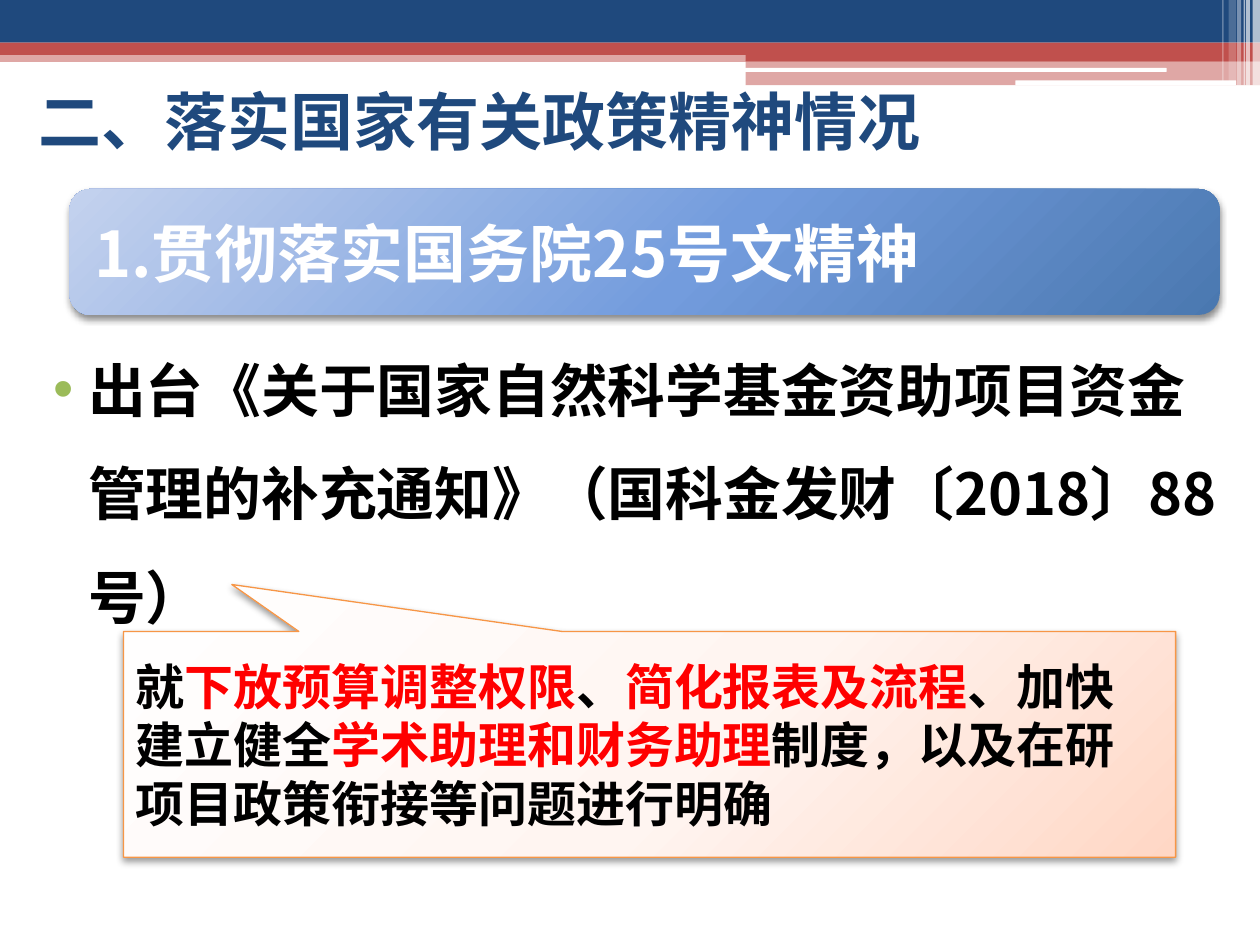
from dataclasses import dataclass

from lxml.etree import SubElement
from pptx import Presentation
from pptx.dml.color import RGBColor
from pptx.enum.shapes import MSO_SHAPE as Preset
from pptx.enum.text import MSO_ANCHOR as Anchor
from pptx.oxml.ns import qn
from pptx.util import Cm, Pt

FONT = "Noto Sans CJK SC"
NAVY, BRICK, WHITE, BLACK, RED = "1F497D", "C0504D", "FFFFFF", "000000", "FF0000"
ORANGE, GREEN = "F79646", "9BBB59"


@dataclass(frozen=True)
class Box:
    left: float
    top: float
    width: float
    height: float

    def lengths(self) -> tuple:
        return Cm(self.left), Cm(self.top), Cm(self.width), Cm(self.height)


@dataclass(frozen=True)
class Band:
    box: Box
    color: str
    opacity: int = 100
    preset: Preset = Preset.RECTANGLE


@dataclass(frozen=True)
class Panel:
    box: Box
    preset: Preset
    stops: tuple
    shadow_opacity: int
    adjustments: tuple = ()
    outline: str = ""


def rgb(color: str) -> RGBColor:
    return RGBColor.from_string(color)


def add_child(parent, tag: str, **attributes):
    return SubElement(parent, qn(tag), {key: str(value) for key, value in attributes.items()})


def add_color(parent, color: str, opacity: int = 100):
    swatch = add_child(parent, "a:srgbClr", val=color)
    if opacity < 100:
        add_child(swatch, "a:alpha", val=opacity * 1000)


def draw_band(slide, band: Band):
    strip = slide.shapes.add_shape(band.preset, *band.box.lengths())
    strip.shadow.inherit = False
    strip.line.fill.background()
    strip.fill.solid()
    strip.fill.fore_color.rgb = rgb(band.color)
    if band.opacity < 100:
        swatch = strip.fill._xPr.find(qn("a:solidFill"))[0]
        add_child(swatch, "a:alpha", val=band.opacity * 1000)


def draw_panel(slide, panel: Panel):
    shape = slide.shapes.add_shape(panel.preset, *panel.box.lengths())
    for index, value in enumerate(panel.adjustments):
        shape.adjustments[index] = value
    if panel.outline:
        shape.line.color.rgb = rgb(panel.outline)
        shape.line.width = Pt(0.75)
    else:
        shape.line.fill.background()
    shape.shadow.inherit = False
    properties = shape._element.spPr
    gradient = add_child(properties, "a:gradFill", rotWithShape=1)
    stops = add_child(gradient, "a:gsLst")
    for position, color in zip((0, 55, 100), panel.stops):
        add_color(add_child(stops, "a:gs", pos=position * 1000), color)
    glow = add_child(gradient, "a:path", path="circle")
    add_child(glow, "a:fillToRect", l=-40000, t=-90000, r=140000, b=190000)
    properties.find(qn("a:prstGeom")).addnext(gradient)
    shadow = add_child(properties.find(qn("a:effectLst")), "a:outerShdw", blurRad=Pt(4),
                       dist=Pt(2), dir=90 * 60000, algn="ctr", rotWithShape=0)
    add_color(shadow, BLACK, panel.shadow_opacity)
    return shape


def write(shape, runs, *, size: float, anchor=Anchor.MIDDLE, inset: float = 0, color: str = BLACK):
    frame = shape.text_frame
    frame.word_wrap = True
    frame.vertical_anchor = anchor
    if inset:
        frame.margin_left = frame.margin_right = Cm(inset)
        frame.margin_top = frame.margin_bottom = Cm(inset)
    paragraph = frame.paragraphs[0]
    paragraph.alignment = 1
    for words, run_color in [(runs, color)] if isinstance(runs, str) else runs:
        run = paragraph.add_run()
        run.text = words
        run.font.size = Pt(size)
        run.font.bold = True
        run.font.name = FONT
        run.font.color.rgb = rgb(run_color)
        add_child(run.font._element, "a:ea", typeface=FONT)
    return paragraph


def add_bullet(paragraph, color: str):
    paragraph.line_spacing = 1.5
    paragraph.space_before = Pt(3)
    properties = paragraph._p.get_or_add_pPr()
    properties.set("marL", str(Cm(1.02)))
    properties.set("indent", str(-Cm(0.71)))
    add_color(add_child(properties, "a:buClr"), color)
    add_child(properties, "a:buFont", typeface="Arial")
    add_child(properties, "a:buChar", char="•")


BANDS = [
    Band(Box(0, 1.02, 25.4, 0.23), BRICK, 50),
    Band(Box(0, 0, 25.4, 0.86), NAVY),
    Band(Box(0, 0.86, 25.4, 0.25), BRICK),
    Band(Box(15.03, 0.99, 10.37, 0.24), BRICK),
    Band(Box(15.03, 1.22, 10.37, 0.5), BRICK, 50),
    Band(Box(15.01, 1.37, 8.51, 0.08), WHITE, preset=Preset.ROUNDED_RECTANGLE),
    Band(Box(20.47, 1.62, 4.45, 0.1), WHITE, preset=Preset.ROUNDED_RECTANGLE),
]
STRIPES = [
    (25.25, 0.15, 1.73, 65),
    (25.12, 0.08, 1.73, 65),
    (25.07, 0.03, 1.73, 60),
    (24.94, 0.08, 1.73, 40),
    (24.77, 0.15, 1.63, 20),
    (24.64, 0.03, 1.63, 30),
]
BANNER = Panel(Box(1.4, 3.81, 23.19, 2.54), Preset.ROUNDED_RECTANGLE,
               ("C4D2EE", "739CDD", "4A78B0"), 45)
CALLOUT = Panel(Box(2.49, 12.73, 21.21, 4.55), Preset.RECTANGULAR_CALLOUT,
                ("FFFEFE", "FFF5F1", "FFD7C5"), 40, (-0.397, -0.708), ORANGE)
CALLOUT_RUNS = [
    ("就", BLACK),
    ("下放预算调整权限", RED),
    ("、", BLACK),
    ("简化报表及流程", RED),
    ("、加快建立健全", BLACK),
    ("学术助理和财务助理", RED),
    ("制度，以及在研项目政策衔接等问题进行明确", BLACK),
]


def main():
    deck = Presentation()
    deck.slide_width, deck.slide_height = Cm(25.4), Cm(19.05)
    slide = deck.slides.add_slide(deck.slide_layouts[6])

    stripes = [Band(Box(left, 0, width, height), WHITE, opacity)
               for left, width, height, opacity in STRIPES]
    for band in BANDS + stripes:
        draw_band(slide, band)

    draw_panel(slide, BANNER)
    heading = slide.shapes.add_textbox(*Box(1.52, 3.94, 22.96, 2.29).lengths())
    write(heading, "1.贯彻落实国务院25号文精神", size=36, inset=0.38, color=WHITE)

    title = slide.shapes.add_textbox(*Box(0.53, 1.52, 23.04, 1.8).lengths())
    write(title, "二、落实国家有关政策精神情况", size=36, color=NAVY)

    notice = slide.shapes.add_textbox(*Box(0.51, 6.32, 24.41, 12.73).lengths())
    notice_text = "出台《关于国家自然科学基金资助项目资金管理的补充通知》（国科金发财〔2018〕88号）"
    add_bullet(write(notice, notice_text, size=33, anchor=Anchor.TOP), GREEN)

    write(draw_panel(slide, CALLOUT), CALLOUT_RUNS, size=28)
    deck.save("out.pptx")


if __name__ == "__main__":
    main()
